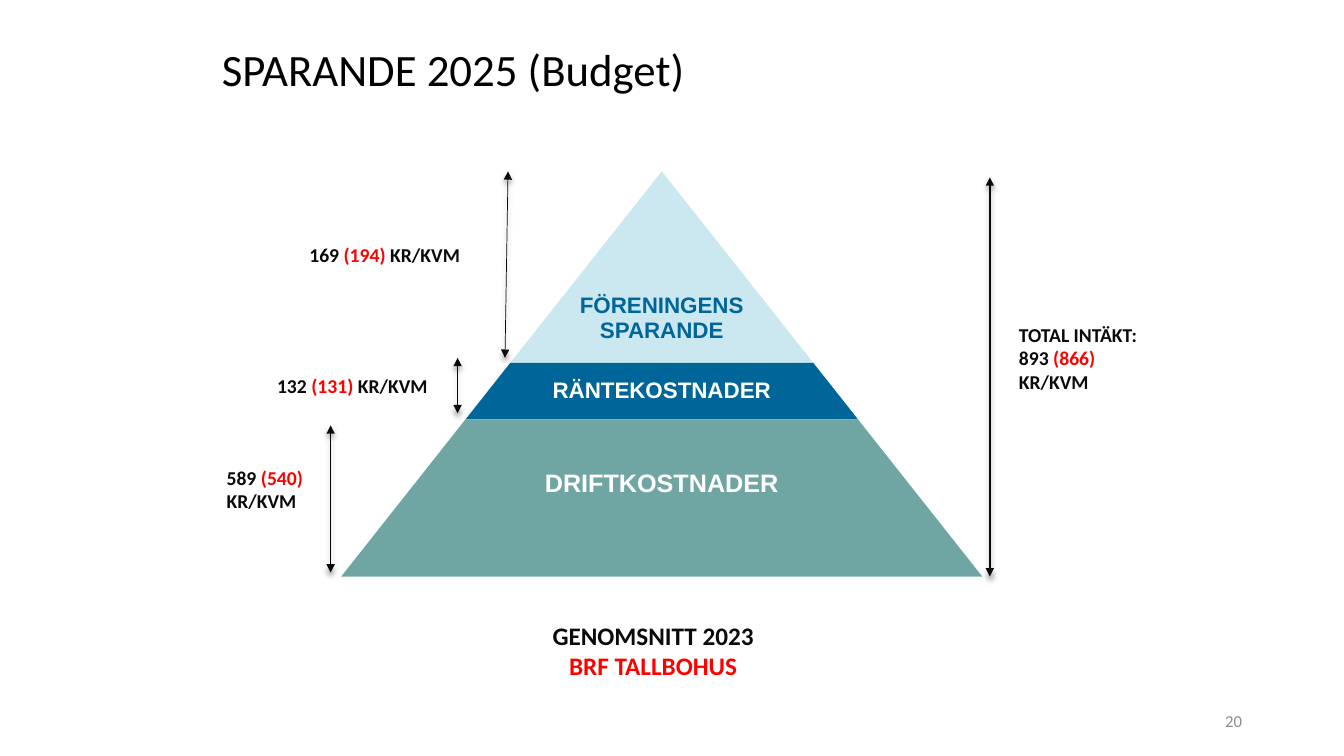
import dataclasses

import lxml.etree
import pptx
import pptx.dml.color
import pptx.enum.shapes
import pptx.enum.text
import pptx.oxml
import pptx.oxml.ns
import pptx.util

ALIGN = pptx.enum.text.PP_ALIGN
ANCHOR = pptx.enum.text.MSO_ANCHOR


@dataclasses.dataclass(frozen=True)
class Theme:
    text_font: str = "Calibri"
    band_font: str = "Arial"
    black: str = "000000"
    ink: str = "0A0A0A"
    red: str = "FF0000"
    grey: str = "8C8C8C"
    white: str = "FFFFFF"
    pale: str = "CBE8F1"
    blue: str = "006699"
    green: str = "6FA5A2"
    title: int = 32
    heading: int = 18
    band: int = 16
    label: int = 14
    number: int = 12


T = Theme()

# Grid: one column or row is a tenth of an inch
COLS, ROWS = 133.33, 75
APEX_COL, APEX_ROW, SLOPE = 65.65, 17, 0.791


def grid(n):
    return pptx.util.Inches(n / 10)


def box(col, row, cols, rows):
    return [grid(n) for n in (col, row, cols, rows)]


def add_run(p, text, size, color, bold=True, font=T.text_font):
    r = p.add_run()
    r.text = text
    r.font.size = pptx.util.Pt(size)
    r.font.name = font
    r.font.bold = bold
    r.font.color.rgb = pptx.dml.color.RGBColor.from_string(color)


def add_text(s, place, paragraphs, size, align=ALIGN.LEFT, bold=True, anchor=ANCHOR.TOP):
    """Text box; each paragraph is a list of (text, colour) runs, None breaks the line."""
    tf = s.shapes.add_textbox(*box(*place)).text_frame
    tf.word_wrap = True
    tf.vertical_anchor = anchor
    for i, runs in enumerate(paragraphs):
        p = tf.add_paragraph() if i else tf.paragraphs[0]
        p.alignment = align
        for run in runs:
            if run is None:
                p.add_line_break()
            else:
                add_run(p, run[0], size, run[1], bold)


def add_amount(s, place, amount, previous, heading=None):
    lead = [(heading, T.ink), None] if heading else []
    runs = [(f"{amount} ", T.ink), (f"({previous}) ", T.red), ("KR/KVM", T.ink)]
    add_text(s, place, [lead + runs], T.label)


def add_band(s, top, bottom, fill, lines, color, size, inset):
    """Slice of the pyramid between two rows; its width follows from the slope."""
    half = SLOPE * (bottom - APEX_ROW)
    sp = s.shapes.add_shape(pptx.enum.shapes.MSO_SHAPE.TRAPEZOID,
                            *box(APEX_COL - half, top, 2 * half, bottom - top))
    sp.adjustments[0] = SLOPE
    sp.shadow.inherit = False
    sp.fill.solid()
    sp.fill.fore_color.rgb = pptx.dml.color.RGBColor.from_string(fill)
    sp.line.fill.background()
    tf = sp.text_frame
    tf.word_wrap = False
    tf.vertical_anchor = ANCHOR.TOP
    tf.margin_left = tf.margin_right = tf.margin_bottom = 0
    tf.margin_top = grid(inset)
    p = tf.paragraphs[0]
    p.alignment = ALIGN.CENTER
    p.line_spacing = 0.95
    for i, line in enumerate(lines):
        if i:
            p.add_line_break()
        add_run(p, line, size, color, font=T.band_font)


def add_measure(s, start, end, width=0.5):
    """Two-headed arrow with a soft shadow below it."""
    line = s.shapes.add_connector(pptx.enum.shapes.MSO_CONNECTOR.STRAIGHT,
                                  *[grid(n) for n in start + end])
    line.line.width = pptx.util.Pt(width)
    line.line.color.rgb = pptx.dml.color.RGBColor.from_string(T.ink)
    ln = line.line._get_or_add_ln()
    for tag in ("a:headEnd", "a:tailEnd"):
        lxml.etree.SubElement(ln, pptx.oxml.ns.qn(tag), type="triangle")
    line._element.spPr.append(pptx.oxml.parse_xml(
        f'<a:effectLst {pptx.oxml.ns.nsdecls("a")}>'
        '<a:outerShdw blurRad="50800" dist="38100" dir="5400000" rotWithShape="0">'
        f'<a:srgbClr val="{T.black}"><a:alpha val="40000"/></a:srgbClr>'
        '</a:outerShdw></a:effectLst>'))


def add_title(s, place, text):
    sp = s.shapes.title
    sp.left, sp.top, sp.width, sp.height = box(*place)
    tf = sp.text_frame
    tf.vertical_anchor = ANCHOR.MIDDLE
    p = tf.paragraphs[0]
    p.alignment = ALIGN.LEFT
    p.line_spacing = 0.9
    add_run(p, text, T.title, T.black, bold=False)


def main():
    prs = pptx.Presentation()
    prs.slide_width, prs.slide_height = grid(COLS), grid(ROWS)
    s = prs.slides.add_slide(prs.slide_layouts[5])
    add_title(s, (21, 3.6, 87.7, 7.1), "SPARANDE 2025 (Budget)")

    # Pyramid
    add_band(s, APEX_ROW, 36, T.pale, ["FÖRENINGENS", "SPARANDE"], T.blue, T.band, 5.7)
    add_band(s, 36, 41.6, T.blue, ["RÄNTEKOSTNADER"], T.white, T.band, 1.1)
    add_band(s, 41.6, 57.2, T.green, ["DRIFTKOSTNADER"], T.white, T.heading, 3)

    # Measuring arrows
    add_measure(s, (98.2, 17.6), (98.2, 57.2), width=1)
    add_measure(s, (50.4, 17), (50.1, 35.5))
    add_measure(s, (45.4, 35.5), (45.4, 41))
    add_measure(s, (32.8, 42.2), (32.8, 56.8))

    # Amounts, with the earlier year in red
    add_amount(s, (100.1, 31.5, 16.4, 8.1), 893, 866, "TOTAL INTÄKT:")
    add_amount(s, (29.7, 23.6, 19.5, 3.4), 169, 194)
    add_amount(s, (26.5, 36.6, 20.7, 3.4), 132, 131)
    add_amount(s, (21.5, 45.7, 10.7, 5.7), 589, 540)

    # Caption and slide number
    add_text(s, (47.5, 61, 34.6, 7.1),
             [[("GENOMSNITT 2023", T.ink)], [("BRF TALLBOHUS", T.red)]],
             T.heading, ALIGN.CENTER)
    add_text(s, (94.2, 69.5, 30, 4), [[("20", T.grey)]], T.number,
             ALIGN.RIGHT, bold=False, anchor=ANCHOR.MIDDLE)
    prs.save("out.pptx")


if __name__ == "__main__":
    main()
